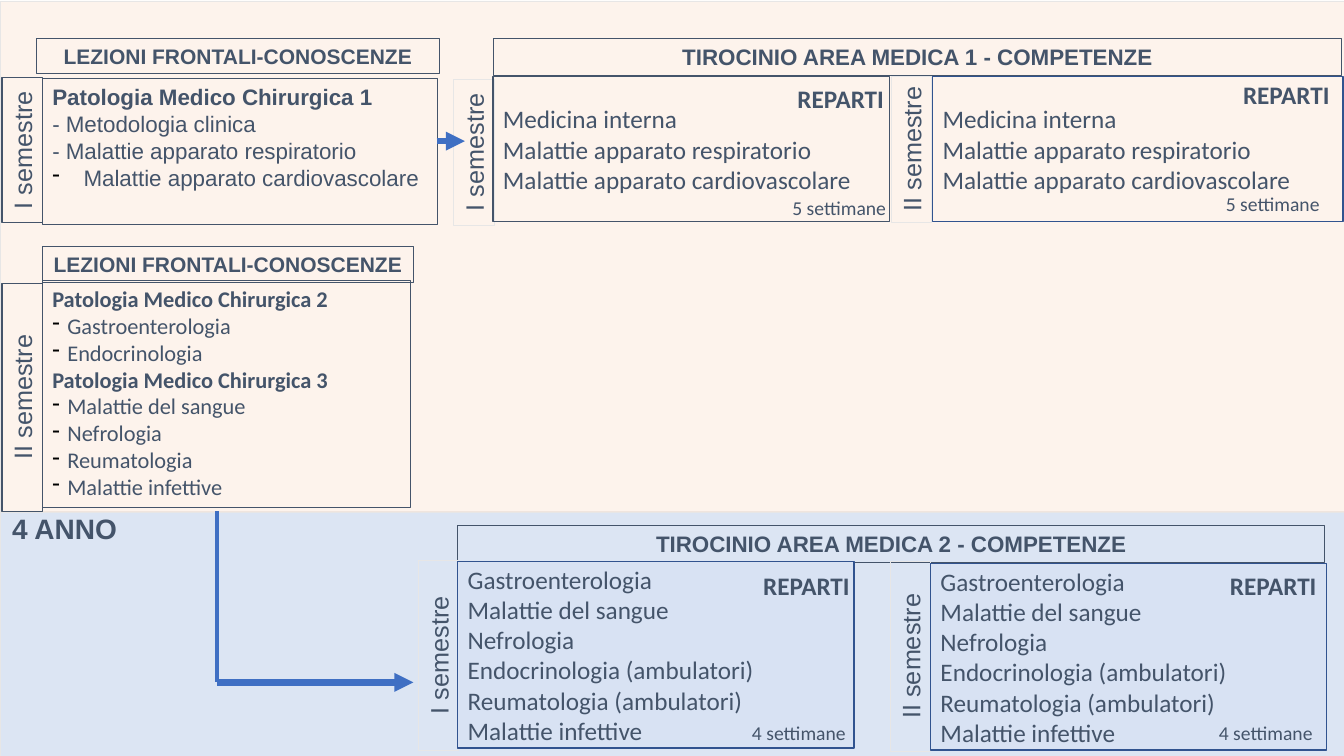
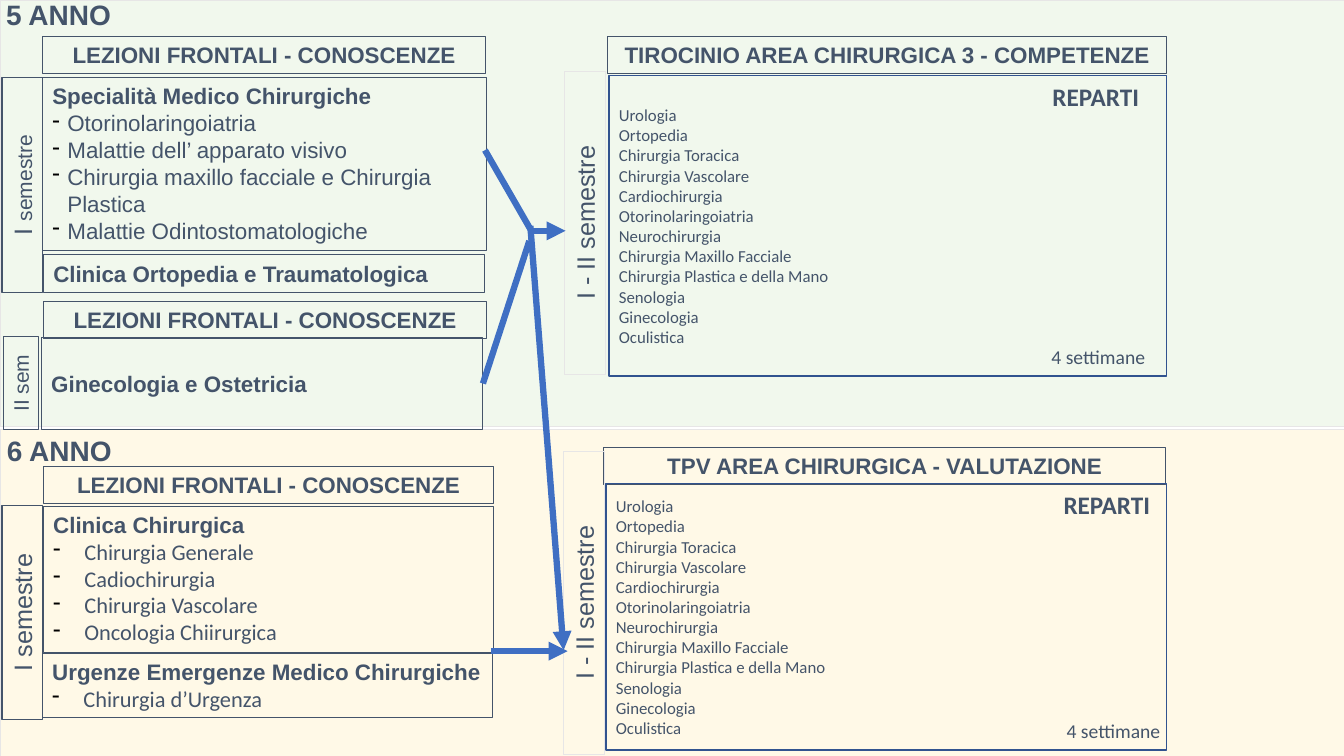
import pptx
import pptx.util
import pptx.dml.color
import pptx.enum.shapes
import pptx.enum.text
from collections import namedtuple
from lxml import etree
from pptx.oxml.ns import qn
from pptx.util import Inches, Pt

# Shared look
INK, NAVY, PALE, BLUE = "44546A", "31538F", "E7E6E6", "3F6FC3"
ARIAL, CALIBRI = "Arial", "Calibri"
LEFT, MID = pptx.enum.text.PP_ALIGN.LEFT, pptx.enum.text.PP_ALIGN.CENTER
TOP = pptx.enum.text.MSO_ANCHOR.TOP
CENTRE = pptx.enum.text.MSO_ANCHOR.MIDDLE
RECT = pptx.enum.shapes.MSO_SHAPE.RECTANGLE
WIDE, TALL = 13.33, 7.5

Para = namedtuple("Para", "runs bold font indent")

# Shared lists
BASIC = ["Medicina interna", "Malattie apparato respiratorio",
         "Malattie apparato cardiovascolare"]
CLINIC = ["Gastroenterologia", "Malattie del sangue", "Nefrologia",
          "Endocrinologia (ambulatori)", "Reumatologia (ambulatori)",
          "Malattie infettive"]
SURGERY = ["Urologia", "Ortopedia", "Chirurgia Toracica",
           "Chirurgia Vascolare", "Cardiochirurgia", "Otorinolaringoiatria",
           "Neurochirurgia", "Chirurgia Maxillo Facciale",
           "Chirurgia Plastica e della Mano", "Senologia", "Ginecologia",
           "Oculistica"]


def tint(target, code):
    """Colour a fill, a line's fill or a font."""
    if hasattr(target, "solid"):
        target.solid()
        target = target.fore_color
    else:
        target = target.color
    target.rgb = pptx.dml.color.RGBColor.from_string(code)


def place(shape, x, y, w, h):
    shape.left, shape.top = Inches(x), Inches(y)
    shape.width, shape.height = Inches(w), Inches(h)


def dash(para, indent):
    """Hanging black dash bullet."""
    props = para._p.get_or_add_pPr()
    props.set("marL", str(Inches(indent)))
    props.set("indent", str(-Inches(indent)))
    colour = etree.SubElement(props, qn("a:buClr"))
    etree.SubElement(colour, qn("a:srgbClr"), val="000000")
    etree.SubElement(props, qn("a:buChar"), char="-")


def head(text, font=ARIAL):
    return Para([text], True, font, 0)


def plain(texts, font=ARIAL, indent=0):
    return [Para([text], False, font, indent) for text in texts]


def write(shape, paras, size, align=LEFT, anchor=TOP):
    """Fill a shape; a run is a text or a (text, size) pair."""
    frame = shape.text_frame
    frame.word_wrap = True
    frame.auto_size = pptx.enum.text.MSO_AUTO_SIZE.NONE
    frame.vertical_anchor = anchor
    for i, item in enumerate(paras):
        para = frame.add_paragraph() if i else frame.paragraphs[0]
        para.alignment = align
        if item.indent:
            dash(para, item.indent)
        for part in item.runs:
            text, points = (part, size) if isinstance(part, str) else part
            run = para.add_run()
            run.text = text
            run.font.name, run.font.size = item.font, Pt(points)
            run.font.bold = item.bold
            tint(run.font, INK)


def box(slide, x, y, w, h, line=INK, weight=0.75, fill=None):
    shape = slide.shapes.add_shape(RECT, *map(Inches, (x, y, w, h)))
    shape.shadow.inherit = False
    if fill:
        tint(shape.fill, fill)
    else:
        shape.fill.background()
    tint(shape.line.fill, line)
    shape.line.width = Pt(weight)
    return shape


def band(slide, y, h, fill):
    """Translucent full-width strip behind everything."""
    shape = box(slide, 0, y, WIDE, h, PALE, 0.25, fill)
    colour = shape.fill._xPr.find(qn("a:solidFill"))[0]
    etree.SubElement(colour, qn("a:alpha"), val="46000")
    slide.shapes._spTree.insert(2, shape._element)


def year(shape, x, y, text):
    place(shape, x, y, 1.4, 0.44)
    write(shape, [head(text)], 20)


def note(slide, x, y, para, size):
    shape = slide.shapes.add_textbox(*map(Inches, (x, y, 1.25, 0.4)))
    write(shape, [para], size)


def banner(slide, x, y, w, text, size=16, h=0.37):
    write(box(slide, x, y, w, h), [head(text)], size, MID)


def panel(slide, x, y, w, h, paras, anchor=TOP):
    shape = box(slide, x, y, w, h)
    write(shape, paras, 16, LEFT, anchor)
    return shape


def side(slide, x, y, h, runs, size=18, w=0.4, line=INK, weight=0.75):
    """Label read upwards; x, y, w, h is the area it covers."""
    shape = box(slide, x + (w - h) / 2, y + (h - w) / 2, h, w, line, weight)
    shape.rotation = 270
    write(shape, [Para(runs, False, ARIAL, 0)], size, MID)


def faint(slide, x, y, h, text):
    side(slide, x, y, h, [text], line=PALE, weight=0.25)


def ward(slide, area, items, size, tag, weeks, line=NAVY, fill=None):
    """Ward list with its REPARTI tag and its length in weeks."""
    shape = box(slide, *area, line, 1, fill)
    write(shape, plain(items, CALIBRI), size, LEFT, CENTRE)
    note(slide, *tag, head("REPARTI", CALIBRI), 18)
    x, y, text = weeks
    note(slide, x, y, plain([text], CALIBRI)[0], 14)


def link(slide, start, end, arrow=True, weight=4.5):
    kind = pptx.enum.shapes.MSO_CONNECTOR.STRAIGHT
    line = slide.shapes.add_connector(kind, *map(Inches, start + end))
    tint(line.line.fill, BLUE)
    line.line.width = Pt(weight)
    if arrow:
        etree.SubElement(line.line._get_or_add_ln(), qn("a:tailEnd"),
                         type="triangle")
    etree.SubElement(line._element.spPr, qn("a:effectLst"))
    return line


def medical(slide):
    band(slide, 0.01, 5.07, "FBE5D6")
    band(slide, 5.07, 2.43, "B4C7E7")
    year(slide.shapes.title, 0.02, 5.02, "4 ANNO")

    # Lessons
    lessons = "LEZIONI FRONTALI-CONOSCENZE"
    banner(slide, 0.36, 0.38, 4, lessons, 15, 0.35)
    side(slide, 0.02, 0.77, 1.44, ["I semestre"])
    panel(slide, 0.42, 0.78, 3.92, 1.45,
          [head("Patologia Medico Chirurgica 1")]
          + plain(["- Metodologia clinica",
                   "- Malattie apparato respiratorio"])
          + plain(["Malattie apparato cardiovascolare"], indent=0.31))
    banner(slide, 0.42, 2.45, 3.68, lessons, 15, 0.35)
    side(slide, 0.02, 2.81, 2.26, ["II semestre"])
    panel(slide, 0.42, 2.78, 3.65, 2.26,
          [head("Patologia Medico Chirurgica 2", CALIBRI)]
          + plain(["Gastroenterologia", "Endocrinologia"], CALIBRI, 0.15)
          + [head("Patologia Medico Chirurgica 3", CALIBRI)]
          + plain(["Malattie del sangue", "Nefrologia", "Reumatologia",
                   "Malattie infettive"], CALIBRI, 0.15))

    # Placements, area 1
    banner(slide, 4.89, 0.38, 8.42, "TIROCINIO AREA MEDICA 1 - COMPETENZE")
    faint(slide, 4.5, 0.79, 1.44, "I semestre")
    ward(slide, (4.89, 0.76, 3.93, 1.44), BASIC, 18, (7.81, 0.78),
         (7.76, 1.89, "5 settimane"), INK)
    faint(slide, 8.84, 0.76, 1.44, "II semestre")
    ward(slide, (9.25, 0.76, 4.07, 1.44), BASIC, 18, (12.23, 0.74),
         (12.06, 1.86, "5 settimane"))

    # Placements, area 2
    banner(slide, 4.54, 5.21, 8.6, "TIROCINIO AREA MEDICA 2 - COMPETENZE")
    faint(slide, 4.15, 5.56, 1.88, "I semestre")
    ward(slide, (4.54, 5.57, 3.93, 1.85), CLINIC, 18, (7.47, 5.61),
         (7.36, 7.1, "4 settimane"), fill="D8E2F3")
    faint(slide, 8.83, 5.57, 1.88, "II semestre")
    ward(slide, (9.23, 5.59, 3.93, 1.85), CLINIC, 18, (12.1, 5.61),
         (11.99, 7.1, "4 settimane"), fill="D8E2F3")

    # Arrows
    link(slide, (4.33, 1.4), (4.61, 1.4))
    link(slide, (2.15, 5.07), (2.15, 6.77), False, 3)
    link(slide, (2.15, 6.77), (4.1, 6.77))


def surgical(slide):
    band(slide, 4.26, 3.24, "FFF2CC")
    band(slide, 0, 4.23, "E2F0D9")
    lessons = "LEZIONI FRONTALI - CONOSCENZE"

    # Year 5 lessons
    year(slide.shapes.title, -0.04, -0.08, "5 ANNO")
    banner(slide, 0.42, 0.36, 4.4, lessons)
    side(slide, 0.02, 0.77, 2.13, ["I ", ("semestre", 15)])
    panel(slide, 0.42, 0.77, 4.41, 1.72,
          [head("Specialità Medico Chirurgiche")]
          + plain(["Otorinolaringoiatria", "Malattie dell’ apparato visivo",
                   "Chirurgia maxillo facciale e Chirurgia Plastica",
                   "Malattie Odintostomatologiche"], indent=0.15))
    panel(slide, 0.43, 2.53, 4.38, 0.37,
          [head("Clinica Ortopedia e Traumatologica")], CENTRE)
    banner(slide, 0.43, 2.99, 4.4, lessons)
    side(slide, 0.03, 3.34, 0.92, ["II sem"], 15, 0.35)
    birth = panel(slide, 0.41, 3.35, 4.38, 0.91,
                  [head("Ginecologia e Ostetricia")], CENTRE)

    # Year 5 placement
    banner(slide, 6.03, 0.36, 5.54, "TIROCINIO AREA CHIRURGICA 3 - COMPETENZE")
    faint(slide, 5.6, 0.71, 3, "I - II semestre")
    ward(slide, (6.04, 0.75, 5.53, 2.98), SURGERY, 12, (10.34, 0.76),
         (10.33, 3.37, "4 settimane"))

    # Year 6 lessons
    year(slide.shapes.add_textbox(0, 0, 0, 0), -0.03, 4.25, "6 ANNO")
    banner(slide, 0.43, 4.63, 4.47, lessons)
    side(slide, 0.02, 5.01, 2.13, ["I semestre"])
    panel(slide, 0.43, 5.02, 4.47, 1.45,
          [head("Clinica Chirurgica")]
          + plain(["Chirurgia Generale", "Cadiochirurgia",
                   "Chirurgia Vascolare", "Oncologia Chiirurgica"],
                  CALIBRI, 0.31))
    panel(slide, 0.42, 6.48, 4.47, 0.64,
          [head("Urgenze Emergenze Medico Chirurgiche")]
          + plain(["Chirurgia d’Urgenza"], CALIBRI, 0.31))

    # Year 6 placement
    banner(slide, 5.99, 4.44, 5.57, "TPV AREA CHIRURGICA - VALUTAZIONE")
    faint(slide, 5.59, 4.48, 3, "I - II semestre")
    ward(slide, (6.01, 4.8, 5.56, 2.64), SURGERY, 12, (10.45, 4.81),
         (10.48, 7.08, "4 settimane"))

    # Arrows
    link(slide, (4.81, 1.49), (5.27, 2.29), False)
    link(slide, (4.79, 3.81), (5.25, 2.39), False).begin_connect(birth, 3)
    link(slide, (5.27, 2.29), (5.61, 2.29))
    link(slide, (5.26, 2.24), (5.59, 6.45))
    link(slide, (4.87, 6.46), (5.63, 6.46))


def main():
    deck = pptx.Presentation()
    deck.slide_width, deck.slide_height = Inches(WIDE), Inches(TALL)
    for build in (medical, surgical):
        build(deck.slides.add_slide(deck.slide_layouts[5]))
    deck.save("out.pptx")


if __name__ == "__main__":
    main()
